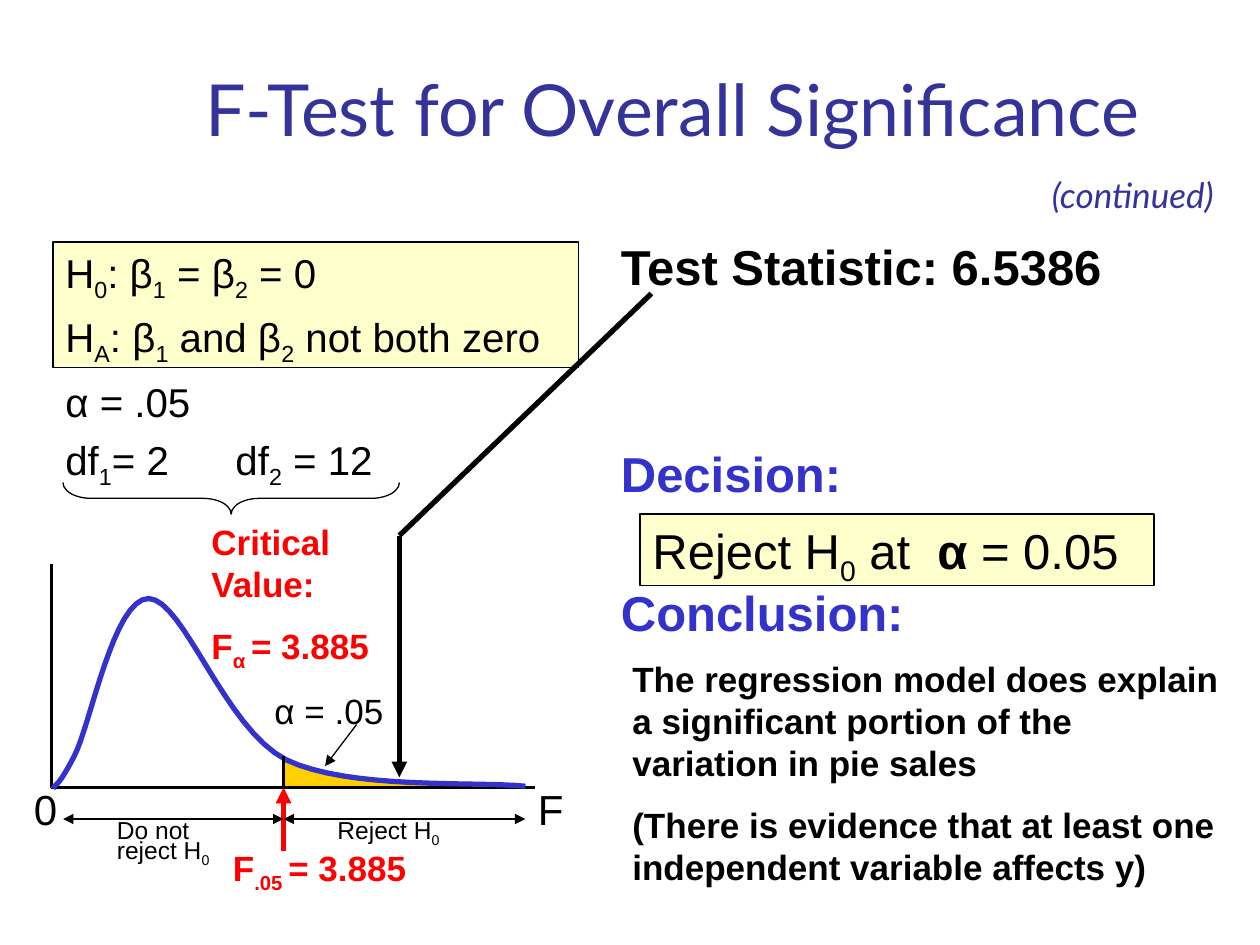
from lxml import etree
from pptx import Presentation
from pptx.dml.color import RGBColor
from pptx.enum.shapes import MSO_CONNECTOR, MSO_SHAPE
from pptx.enum.text import MSO_ANCHOR, MSO_AUTO_SIZE, PP_ALIGN
from pptx.oxml.ns import qn
from pptx.util import Inches, Pt

BLACK = RGBColor(0, 0, 0)
RED = RGBColor(0xFF, 0, 0)
BLUE = RGBColor(0x33, 0x33, 0xCC)
NAVY = RGBColor(0x33, 0x33, 0x99)
CREAM = RGBColor(0xFF, 0xFF, 0xCC)
GOLD = RGBColor(0xFF, 0xCF, 0x01)

deck = Presentation()
deck.slide_width, deck.slide_height = Inches(10), Inches(7.5)
slide = deck.slides.add_slide(deck.slide_layouts[5])
shapes = slide.shapes


def write(frame, lines, size, color=BLACK, gap=0, **font):
    """Fill a frame; '|' splits runs, '_' marks a subscript and '*' bold."""
    frame.word_wrap = True
    for i, line in enumerate(lines):
        para = frame.paragraphs[0] if i == 0 else frame.add_paragraph()
        para.alignment = PP_ALIGN.LEFT
        para.space_before = Pt(gap if i else 0)
        for piece in line.split("|"):
            run = para.add_run()
            run.text = piece.lstrip("_*")
            look = {"name": "Arial", "size": Pt(size), **font}
            if piece[0] == "*":
                look["bold"] = True
            for key, value in look.items():
                setattr(run.font, key, value)
            run.font.color.rgb = color
            if piece[0] == "_":
                run._r.get_or_add_rPr().set("baseline", "-25000")


def stroke(shape, width, fill=None, color=BLACK):
    """Set outline and fill, and drop the shadow."""
    shape.shadow.inherit = False
    if fill is None:
        shape.fill.background()
    else:
        shape.fill.solid()
        shape.fill.fore_color.rgb = fill
    if width:
        shape.line.color.rgb = color
        shape.line.width = Pt(width)
    else:
        shape.line.fill.background()


# Title
title = shapes.title
place = {"left": 1.08, "top": 0.42, "width": 8.52, "height": 0.83}
for key, value in place.items():
    setattr(title, key, Inches(value))
title.text_frame.auto_size = MSO_AUTO_SIZE.NONE
title.text_frame.vertical_anchor = MSO_ANCHOR.BOTTOM
write(title.text_frame, ["F-Test for Overall Significance"], 41, NAVY, name="Lato")
title.text_frame.paragraphs[0].alignment = PP_ALIGN.CENTER

# Cream panels: hypotheses and decision
panels = []
for box in [(0.42, 1.92, 4.17, 1), (5.08, 4.08, 4.08, 0.57)]:
    panel = shapes.add_shape(MSO_SHAPE.RECTANGLE, *map(Inches, box))
    stroke(panel, 0.75, CREAM)
    panels.append(panel)
panels[1].text_frame.vertical_anchor = MSO_ANCHOR.TOP
write(panels[1].text_frame, ["Reject H|_0| at  |*α| = 0.05"], 28)

# Distribution: tail area, axes, density curve
tail = [(2.25, 6.24), (2.24, 6), (2.39, 6.06), (2.51, 6.1), (2.61, 6.12),
        (2.73, 6.14), (2.99, 6.18), (3.27, 6.2), (3.94, 6.22), (3.94, 6.24)]
axes = [(0.41, 4.48), (0.41, 6.25), (4.25, 6.25)]
knots = [(0.42, 6.26), (0.45, 6.21), (0.46, 6.25), (0.59, 6),
         (0.72, 5.75), (0.9, 4.75), (1.18, 4.75),
         (1.46, 4.76), (1.78, 5.78), (2.27, 6.03),
         (2.77, 6.27), (3.77, 6.2), (4.17, 6.24)]
steps = 16
curve = [knots[0]]
for start in range(0, len(knots) - 1, 3):
    for step in range(1, steps + 1):
        t = step / steps
        u = 1 - t
        weights = (u**3, 3 * u * u * t, 3 * u * t * t, t**3)
        curve.append(tuple(
            sum(w * knot[axis] for w, knot in zip(weights, knots[start:start + 4]))
            for axis in (0, 1)))

for points, closed, width, fill, color in [
    (tail, True, 0, GOLD, BLACK),
    (axes, False, 2, None, BLACK),
    (curve, False, 3, None, BLUE),
]:
    path = [(Inches(x), Inches(y)) for x, y in points]
    pen = shapes.build_freeform(*path[0])
    pen.add_line_segments(path[1:], close=closed)
    stroke(pen.convert_to_shape(), width, fill, color)

# Lines and arrows: from, to, width, colour, arrowheads
for x1, y1, x2, y2, width, color, ends in [
    (2.25, 6, 2.25, 6.25, 1.5, BLACK, []),
    (2.83, 5.75, 2.58, 6.08, 0.75, BLACK, ["tailEnd"]),
    (2.25, 6.75, 2.25, 6.25, 3, RED, ["tailEnd"]),
    (2.25, 6.5, 0.5, 6.5, 0.75, BLACK, ["headEnd", "tailEnd"]),
    (4.17, 6.5, 2.25, 6.5, 0.75, BLACK, ["headEnd", "tailEnd"]),
    (3.17, 4.25, 3.17, 6.17, 3, BLACK, ["tailEnd"]),
    (3.17, 4.25, 5.17, 2.33, 3, BLACK, []),
]:
    line = shapes.add_connector(MSO_CONNECTOR.STRAIGHT, *map(Inches, (x1, y1, x2, y2)))
    line.line.color.rgb = color
    line.line.width = Pt(width)
    for end in ends:
        etree.SubElement(line.line._get_or_add_ln(), qn(f"a:{end}"), type="triangle")
    etree.SubElement(line._element.spPr, qn("a:effectLst"))

# Brace under the degrees of freedom
brace = shapes.add_shape(MSO_SHAPE.LEFT_BRACE, *map(Inches, (1.71, 2.62, 0.25, 2.67)))
brace.rotation = 270
brace.adjustments[0] = 0.89
stroke(brace, 0.75)

# Text boxes: place, lines, size, format
bold = {"bold": True}
frames = []
for box, lines, size, look in [
    ((0.42, 1.92, 4.21, 2),
     ["H|_0|: β|_1| = β|_2| = 0", "H|_A|: β|_1| and β|_2| not both zero",
      "α = .05", "df|_1|= 2\tdf|_2| = 12"], 23, {"gap": 5.5}),
    ((4.83, 1.83, 4.17, 0.55), ["Test Statistic: 6.5386"], 28, bold),
    ((4.83, 3.47, 4.17, 1.7), ["Decision:", "Conclusion:"], 28,
     {"color": BLUE, "gap": 46, **bold}),
    ((4.92, 5.17, 4.92, 1.93),
     ["The regression model does explain a significant portion of the variation in pie sales",
      "(There is evidence that at least one independent variable affects y)"],
     20, {"gap": 11.5, **bold}),
    ((1.58, 4.08, 1.5, 1.26), ["Critical Value:", "F|_α |= 3.885"], 20,
     {"color": RED, "gap": 11.5, **bold}),
    ((1.75, 6.67, 1.67, 0.43), ["F|_.05 |= 3.885"], 20, {"color": RED, **bold}),
    ((2.08, 5.42, 1.17, 0.43), ["α = .05"], 20, {}),
    ((2.58, 6.42, 1.08, 0.33), ["Reject H|_0"], 14, {}),
    ((0.83, 6.42, 1, 0.49), ["Do not", "reject H|_0"], 14, {}),
    ((0.17, 6.17, 0.5, 0.5), ["0"], 24, {}),
    ((4.17, 6.17, 0.33, 0.5), ["F"], 24, {}),
    ((8.25, 1.33, 1.61, 0.43), ["(continued)"], 20,
     {"color": NAVY, "name": "Lato", "italic": True}),
]:
    frame = shapes.add_textbox(*map(Inches, box)).text_frame
    write(frame, lines, size, **look)
    frames.append(frame)

# Tab stop between the two degrees of freedom
props = frames[0].paragraphs[3]._p.get_or_add_pPr()
tabs = etree.SubElement(props, qn("a:tabLst"))
etree.SubElement(tabs, qn("a:tab"), pos=str(Inches(1.35)), algn="l")
# Tight second line in the "Do not reject" label
frames[8].paragraphs[1].line_spacing = Pt(13.5)

deck.save("out.pptx")
